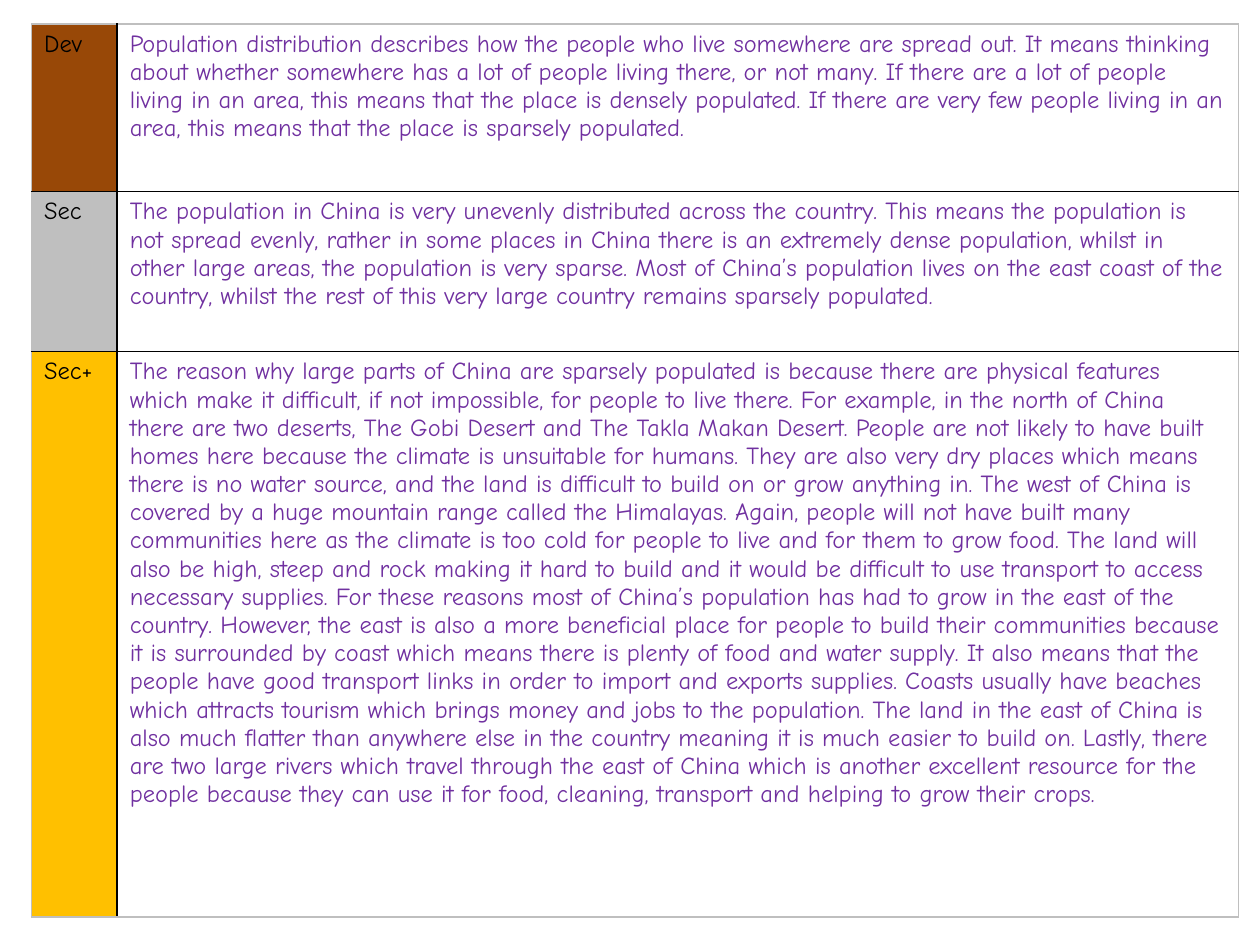
from pptx import Presentation
from pptx.dml.color import RGBColor
from pptx.enum.text import PP_ALIGN
from pptx.oxml.ns import qn
from pptx.util import Inches, Pt
from lxml.etree import SubElement

THEME = {
    "font": "Comic Neue", "size": 14, "label": "000000", "answer": "7030A0",
    "paper": "FFFFFF", "inner": "000000", "outer": "BFBFBF", "line": 1,
}
COLUMNS = [0.68, 8.9]
ROWS = [1.33, 1.27, 4.49]

# Label, label colour and the sentences of the answer
LEVELS = [
    ("Dev", "984807", [
        "Population distribution describes how the people who live somewhere are spread out.",
        "It means thinking about whether somewhere has a lot of people living there, or not many.",
        "If there are a lot of people living in an area, this means that the place is densely "
        "populated.",
        "If there are very few people living in an area, this means that the place is sparsely "
        "populated.",
    ]),
    ("Sec", "BFBFBF", [
        "The population in China is very unevenly distributed across the country.",
        "This means the population is not spread evenly, rather in some places in China there is "
        "an extremely dense population, whilst in other large areas, the population is very "
        "sparse.",
        "Most of China’s population lives on the east coast of the country, whilst the rest of "
        "this very large country remains sparsely populated.",
    ]),
    ("Sec+", "FFC000", [
        "The reason why large parts of China are sparsely populated is because there are "
        "physical features which make it difficult, if not impossible, for people to live there.",
        "For example, in the north of China there are two deserts, The Gobi Desert and The Takla "
        "Makan Desert.",
        "People are not likely to have built homes here because the climate is unsuitable for "
        "humans.",
        "They are also very dry places which means there is no water source, and the land is "
        "difficult to build on or grow anything in.",
        "The west of China is covered by a huge mountain range called the Himalayas.",
        "Again, people will not have built many communities here as the climate is too cold for "
        "people to live and for them to grow food.",
        "The land will also be high, steep and rock making it hard to build and it would be "
        "difficult to use transport to access necessary supplies.",
        "For these reasons most of China’s population has had to grow in the east of the "
        "country.",
        "However, the east is also a more beneficial place for people to build their communities "
        "because it is surrounded by coast which means there is plenty of food and water supply.",
        "It also means that the people have good transport links in order to import and exports "
        "supplies.",
        "Coasts usually have beaches which attracts tourism which brings money and jobs to the "
        "population.",
        "The land in the east of China is also much flatter than anywhere else in the country "
        "meaning it is much easier to build on.",
        "Lastly, there are two large rivers which travel through the east of China which is "
        "another excellent resource for the people because they can use it for food, cleaning, "
        "transport and helping to grow their crops.",
    ]),
]


def write_text(cell, text, *, color, size=THEME["size"], bold=False, align=PP_ALIGN.LEFT):
    paragraph = cell.text_frame.paragraphs[0]
    paragraph.alignment = align
    run = paragraph.add_run()
    run.text = text
    run.font.name = THEME["font"]
    run.font.size = Pt(size)
    run.font.bold = bold
    run.font.color.rgb = RGBColor.from_string(color)


def set_borders(cell, edges):
    """Draw each side of a cell; edges maps a side to whether it is on the table's rim."""
    properties = cell._tc.get_or_add_tcPr()
    for side, on_rim in edges.items():
        line = SubElement(properties, qn(f"a:ln{side}"), w=str(Pt(THEME["line"])))
        fill = SubElement(line, qn("a:solidFill"))
        SubElement(fill, qn("a:srgbClr"), val=THEME["outer" if on_rim else "inner"])


# Slide
presentation = Presentation()
presentation.slide_width = Inches(10)
presentation.slide_height = Inches(7.5)
slide = presentation.slides.add_slide(presentation.slide_layouts[6])

# Table grid
table = slide.shapes.add_table(
    len(ROWS), len(COLUMNS), Inches(0.25), Inches(0.19),
    Inches(sum(COLUMNS)), Inches(sum(ROWS))).table
table.first_row = False
table.horz_banding = False
for column, width in zip(table.columns, COLUMNS):
    column.width = Inches(width)
for row, height in zip(table.rows, ROWS):
    row.height = Inches(height)

# One row per level: coloured label, then the model answer
for row_index, (label, level_color, sentences) in enumerate(LEVELS):
    contents = [(label, THEME["label"], level_color),
                (" ".join(sentences), THEME["answer"], THEME["paper"])]
    for column_index, (text, text_color, fill_color) in enumerate(contents):
        cell = table.cell(row_index, column_index)
        set_borders(cell, {
            "L": column_index == 0, "R": column_index == len(COLUMNS) - 1,
            "T": row_index == 0, "B": row_index == len(ROWS) - 1})
        cell.fill.solid()
        cell.fill.fore_color.rgb = RGBColor.from_string(fill_color)
        write_text(cell, text, color=text_color)

presentation.save("out.pptx")
